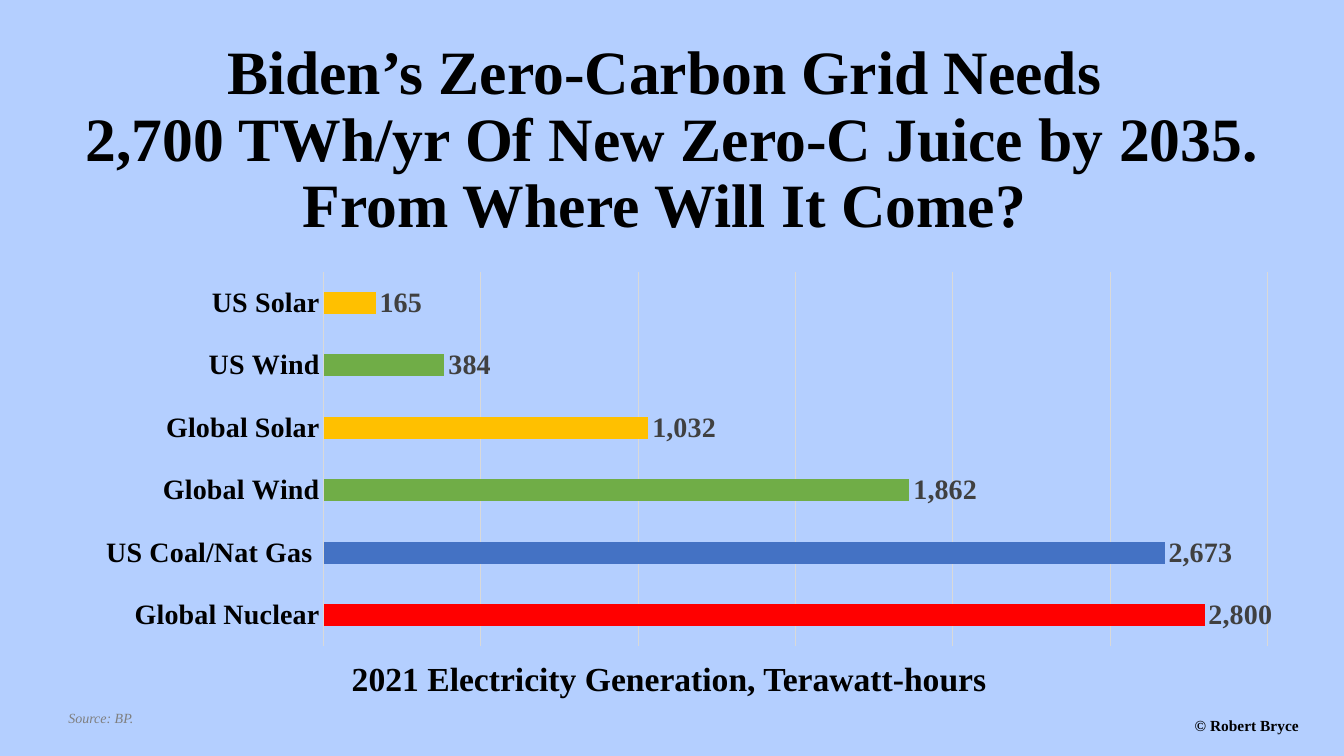
from dataclasses import dataclass

import pptx
import pptx.chart.data
import pptx.dml.color
import pptx.enum.chart
import pptx.enum.text
import pptx.oxml
import pptx.oxml.ns
import pptx.util
from pptx.util import Inches


@dataclass(frozen=True)
class Theme:
    """Fonts, colours and type sizes of the slide."""
    font: str = "Times New Roman"
    chart_font: str = "Calibri"
    background: str = "B4CFFF"
    text: str = "000000"
    muted: str = "7F7F7F"
    label: str = "404040"
    grid: str = "D9D9D9"
    solar: str = "FFC000"
    wind: str = "70AD47"
    fossil: str = "4472C4"
    nuclear: str = "FF0000"
    title_size: int = 44
    caption_size: int = 24
    chart_size: int = 20
    base_size: int = 10
    credit_size: int = 11


THEME = Theme()
TITLE = ["Biden’s Zero-Carbon Grid Needs ",
         "2,700 TWh/yr Of New Zero-C Juice by 2035.",
         "From Where Will It Come? "]
GENERATION = [("Global Nuclear", 2800, THEME.nuclear),
              ("US Coal/Nat Gas ", 2673, THEME.fossil),
              ("Global Wind", 1862, THEME.wind),
              ("Global Solar", 1032, THEME.solar),
              ("US Wind", 384, THEME.wind),
              ("US Solar", 165, THEME.solar)]
PLOT = {"x": 0.239, "y": 0.064, "w": 0.724, "h": 0.891}


def rgb(value):
    """Turn a hex string into a colour."""
    return pptx.dml.color.RGBColor.from_string(value)


def style_font(font, size, color, bold=False, italic=False, name=THEME.font):
    """Set every property of a font."""
    font.name, font.size = name, pptx.util.Pt(size)
    font.bold, font.italic = bold, italic
    font.color.rgb = rgb(color)


def add_text(s, box, lines, size, color=THEME.text, bold=False, italic=False, wrap=True):
    """Add a text box whose lines share one paragraph and return its frame."""
    tf = s.shapes.add_textbox(*map(Inches, box)).text_frame
    tf.word_wrap = wrap
    p = tf.paragraphs[0]
    for i, line in enumerate(lines):
        if i:
            p.add_line_break()
        r = p.add_run()
        r.text = line
        style_font(r.font, size, color, bold, italic)
    return tf


def add_title(s, box, lines):
    """Add the centred headline."""
    tf = add_text(s, box, lines, THEME.title_size, bold=True)
    tf.vertical_anchor = pptx.enum.text.MSO_ANCHOR.MIDDLE
    p = tf.paragraphs[0]
    p.alignment = pptx.enum.text.PP_ALIGN.CENTER
    p.line_spacing = 0.9


def set_line(line, color):
    """Give a chart line its colour and width."""
    line.color.rgb = rgb(color)
    line.width = pptx.util.Pt(0.75)


def place_plot(chart, plot):
    """Fix the inner plot area as fractions of the chart."""
    area = chart._chartSpace.chart.plotArea
    for old in area.findall(pptx.oxml.ns.qn("c:layout")):
        area.remove(old)
    modes = "".join(f'<c:{k}Mode val="edge"/>' for k in "xy")
    sizes = "".join(f'<c:{k} val="{v}"/>' for k, v in plot.items())
    area.insert(0, pptx.oxml.parse_xml(
        f'<c:layout {pptx.oxml.ns.nsdecls("c")}><c:manualLayout>'
        f'<c:layoutTarget val="inner"/>{modes}{sizes}</c:manualLayout></c:layout>'))


def style_axes(chart):
    """Style the category axis and hide the value axis behind its grid."""
    cat, val = chart.category_axis, chart.value_axis
    none = pptx.enum.chart.XL_TICK_MARK.NONE
    cat.major_tick_mark = cat.minor_tick_mark = none
    cat.has_major_gridlines = False
    style_font(cat.tick_labels.font, THEME.chart_size, THEME.text, bold=True)
    set_line(cat.format.line, THEME.grid)
    val.minimum_scale, val.maximum_scale, val.major_unit = 0, 3000, 500
    val.has_major_gridlines = True
    set_line(val.major_gridlines.format.line, THEME.grid)
    val.visible = False


def add_bar_chart(s, box, rows):
    """Add the bar chart with one colour per row."""
    names, values, colors = zip(*rows)
    data = pptx.chart.data.CategoryChartData(number_format="#,##0")
    data.categories = names
    data.add_series("Series 1", values)
    chart = s.shapes.add_chart(pptx.enum.chart.XL_CHART_TYPE.BAR_CLUSTERED,
                               *map(Inches, box), data).chart
    chart.has_legend = chart.has_title = False
    style_font(chart.font, THEME.base_size, THEME.text, name=THEME.chart_font)
    style_axes(chart)
    place_plot(chart, PLOT)
    plot = chart.plots[0]
    plot.gap_width, plot.vary_by_categories = 182, False
    series = plot.series[0]
    series.format.fill.solid()
    series.format.fill.fore_color.rgb = rgb(THEME.fossil)
    for i, color in enumerate(colors):
        fill = series.points[i].format.fill
        fill.solid()
        fill.fore_color.rgb = rgb(color)
    labels = series.data_labels
    labels.show_value = True
    labels.position = pptx.enum.chart.XL_LABEL_POSITION.OUTSIDE_END
    labels.number_format, labels.number_format_is_linked = "#,##0", False
    style_font(labels.font, THEME.chart_size, THEME.label, bold=True)


def main():
    """Build and save the slide."""
    prs = pptx.Presentation()
    prs.slide_width, prs.slide_height = Inches(13.33), Inches(7.5)
    s = prs.slides.add_slide(prs.slide_layouts[6])
    s.background.fill.solid()
    s.background.fill.fore_color.rgb = rgb(THEME.background)
    add_title(s, (0.27, 0.76, 12.8, 1.28), TITLE)
    add_text(s, (0.58, 6.99, 0.88, 0.27), ["Source: BP."], THEME.base_size,
             THEME.muted, italic=True, wrap=False)
    add_text(s, (11.75, 7.06, 1.58, 0.35), ["© Robert Bryce"], THEME.credit_size, bold=True)
    add_text(s, (3.39, 6.48, 6.55, 0.5), ["2021 Electricity Generation, Terawatt-hours"],
             THEME.caption_size, bold=True, wrap=False)
    add_bar_chart(s, (0.12, 2.43, 12.93, 4.17), GENERATION)
    prs.save("out.pptx")


if __name__ == "__main__":
    main()
